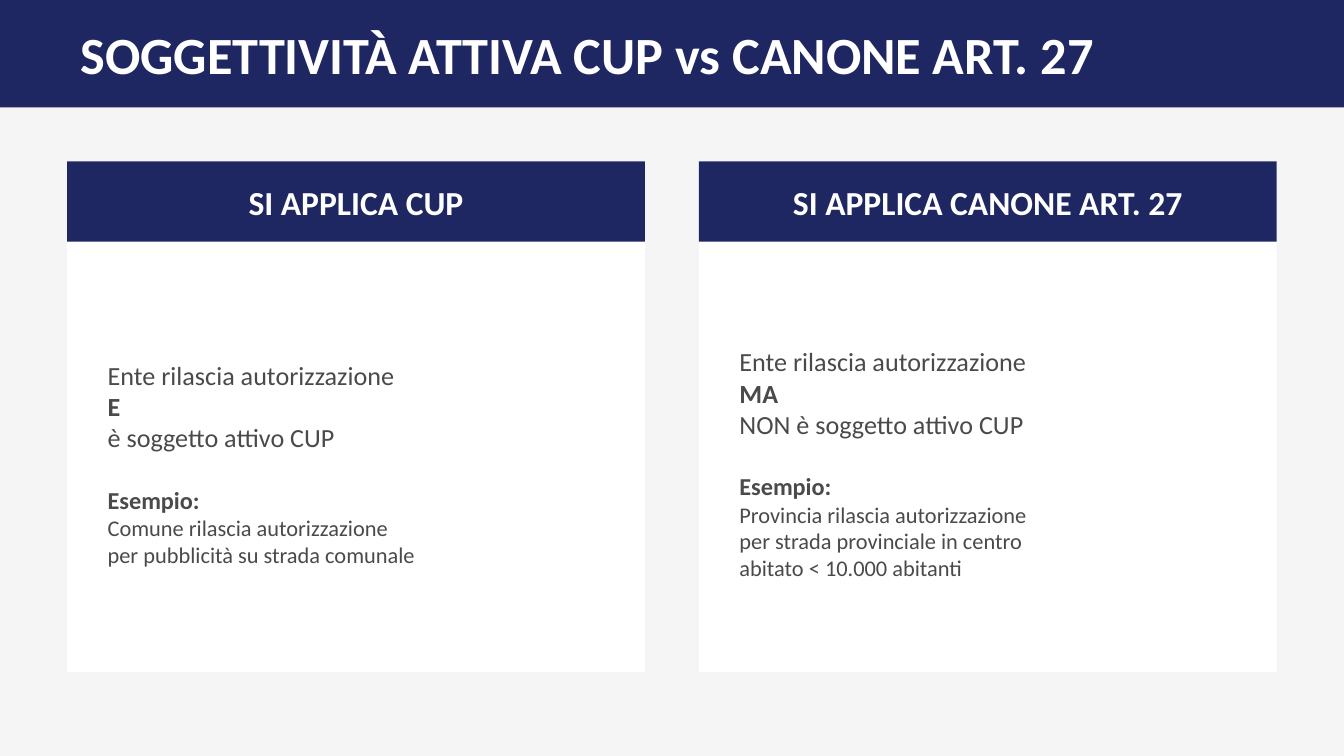
from dataclasses import dataclass

from lxml.etree import SubElement
from pptx import Presentation
from pptx.dml.color import RGBColor as Rgb
from pptx.enum.shapes import MSO_SHAPE as Shape
from pptx.enum.text import MSO_ANCHOR as Anchor, MSO_AUTO_SIZE as Fit, PP_ALIGN as Align
from pptx.oxml.ns import qn
from pptx.util import Cm, Pt


@dataclass(frozen=True)
class Theme:
    font: str = "Calibri"
    navy: Rgb = Rgb(0x1E, 0x27, 0x61)
    white: Rgb = Rgb(0xFF, 0xFF, 0xFF)
    pale: Rgb = Rgb(0xF5, 0xF5, 0xF5)
    gray: Rgb = Rgb(0x4A, 0x4A, 0x4A)
    title: int = 28
    head: int = 18
    body: int = 14
    label: int = 13
    small: int = 12
    gap: int = 17


THEME = Theme()
WIDTH, HEIGHT = 25.4, 14.29
LEFT, TOP = 1.27, 3.05
CARD_W, CARD_H, HEAD_H = 10.92, 9.65, 1.52
STEP = 11.94  # card width plus the gap between cards
INSET = 0.51

# Heading, linking word, status and example of each card
CARDS = [
    ("SI APPLICA CUP", "E", "è soggetto attivo CUP",
     ["Comune rilascia autorizzazione", "per pubblicità su strada comunale"]),
    ("SI APPLICA CANONE ART. 27", "MA", "NON è soggetto attivo CUP",
     ["Provincia rilascia autorizzazione", "per strada provinciale in centro",
      "abitato < 10.000 abitanti"]),
]


def add_rect(slide, x, y, w, h, color):
    """Plain panel, kept behind the placeholders."""
    rect = slide.shapes.add_shape(Shape.RECTANGLE, Cm(x), Cm(y), Cm(w), Cm(h))
    rect.shadow.inherit = False
    rect.fill.solid()
    rect.fill.fore_color.rgb = color
    rect.line.fill.background()
    slide.shapes.title.element.addprevious(rect.element)


def set_text(holder, box, lines, color, align=Align.LEFT):
    """Place a placeholder and fill it with (text, size, bold, space before)."""
    holder.left, holder.top, holder.width, holder.height = map(Cm, box)
    frame = holder.text_frame
    frame.word_wrap = True
    frame.auto_size = Fit.NONE
    frame.vertical_anchor = Anchor.MIDDLE
    for i, (text, size, bold, space) in enumerate(lines):
        para = frame.paragraphs[0] if i == 0 else frame.add_paragraph()
        para.text = text
        props = para._p.get_or_add_pPr()
        props.set("marL", "0")
        props.set("indent", "0")
        SubElement(props, qn("a:buNone"))
        para.alignment = align
        para.space_before = Pt(space)
        font = para.font
        font.name, font.size, font.bold = THEME.font, Pt(size), bold
        font.color.rgb = color


def add_card(slide, x, head, body, card):
    name, link, status, example = card
    add_rect(slide, x, TOP, CARD_W, CARD_H, THEME.white)
    add_rect(slide, x, TOP, CARD_W, HEAD_H, THEME.navy)
    set_text(head, (x, 3.3, CARD_W, 1.02), [(name, THEME.head, True, 0)],
             THEME.white, Align.CENTER)
    lines = [("Ente rilascia autorizzazione", THEME.body, False, 0),
             (link, THEME.body, True, 0),
             (status, THEME.body, False, 0),
             ("Esempio:", THEME.label, True, THEME.gap)]
    lines += [(text, THEME.small, False, 0) for text in example]
    set_text(body, (x + INSET, 5.33, CARD_W - 2 * INSET, 6.86), lines, THEME.gray)


def main():
    deck = Presentation()
    deck.slide_width, deck.slide_height = Cm(WIDTH), Cm(HEIGHT)
    slide = deck.slides.add_slide(deck.slide_layouts.get_by_name("Comparison"))
    slide.background.fill.solid()
    slide.background.fill.fore_color.rgb = THEME.pale

    # Title band
    add_rect(slide, 0, 0, WIDTH, 2.03, THEME.navy)
    set_text(slide.shapes.title, (LEFT, 0.38, 22.86, 1.27),
             [("SOGGETTIVITÀ ATTIVA CUP vs CANONE ART. 27", THEME.title, True, 0)],
             THEME.white)

    # Two cards: each takes a heading and a body placeholder
    spots = list(slide.placeholders)[1:]
    for i, card in enumerate(CARDS):
        head, body = spots[2 * i:2 * i + 2]
        add_card(slide, LEFT + i * STEP, head, body, card)

    deck.save("out.pptx")


if __name__ == "__main__":
    main()
